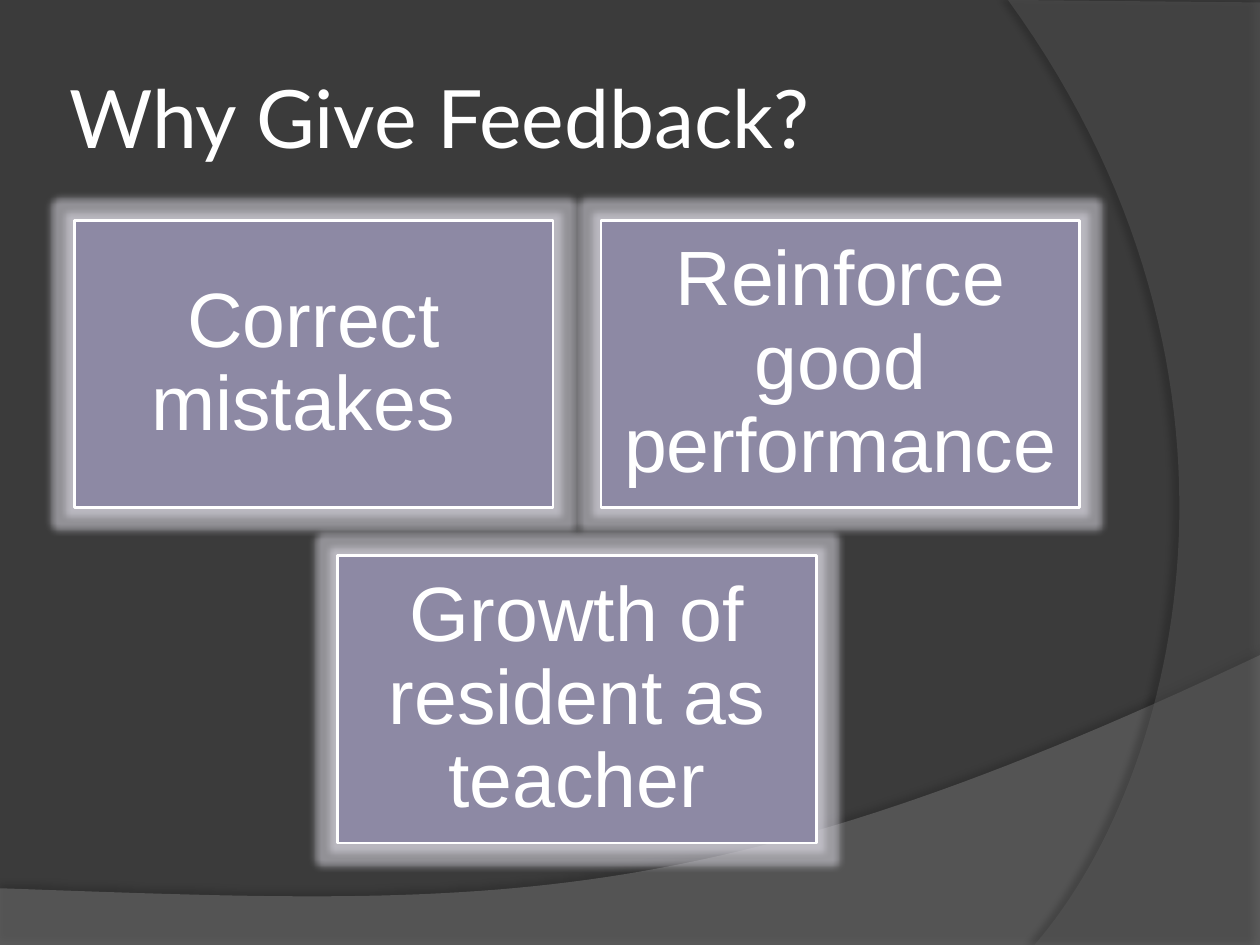
from lxml.etree import SubElement
from pptx import Presentation
from pptx.dml.color import RGBColor as RGB
from pptx.enum.shapes import MSO_SHAPE as Preset
from pptx.enum.text import MSO_ANCHOR as Anchor, PP_ALIGN as Align
from pptx.oxml.ns import qn
from pptx.util import Inches, Pt

WIDTH, HEIGHT = 10, 7.5
BACKGROUND, WHITE = "3B3B3B", "FFFFFF"
TITLE = "Why Give Feedback?"
REASON_ROWS = [
    ["Correct mistakes ", "Reinforce good performance "],
    ["Growth of resident as teacher"],
]
CARD_WIDTH, CARD_HEIGHT, GAP = 3.8, 2.28, 0.38
GRID_CENTER, GRID_TOP = 4.58, 1.75
CARD_FILL = "8D89A4"
GLOW = dict(color="DAD8E2", opacity=55, radius=8)
TITLE_FORMAT = dict(size=Pt(46), name="Lato")
CARD_FORMAT = dict(size=Pt(44), name="Arial")
SWOOSHES = [
    dict(
        corners=[(0, 7.05), (0, HEIGHT), (WIDTH, HEIGHT)],
        curve=[(10, 5.2), (5.59, 7.29), (3.91, 7.19), (0, 7.05)],
        color="7F7F7F", opacity=45,
        shadow=dict(color="000000", opacity=35, blur=4, distance=3.5, angle=270),
    ),
    dict(
        corners=[(10, 0.02), (WIDTH, HEIGHT)],
        curve=[(8.21, 7.5), (9.35, 6.19), (10.18, 3), (8, 0)],
        color="5E5E5E", opacity=40,
        shadow=dict(color="000000", opacity=45, blur=4, distance=4, angle=180),
    ),
]
CURVE_STEPS = 60


def rgb(color):
    return RGB.from_string(color)


def paint(fill, color):
    fill.solid()
    fill.fore_color.rgb = rgb(color)


def add_alpha(color_node, opacity):
    SubElement(color_node, qn("a:alpha"), val=str(opacity * 1000))


def add_effect(shape, kind, color, opacity, **settings):
    shape.shadow.inherit = False
    effects = shape._element.spPr.find(qn("a:effectLst"))
    values = {key: str(int(value)) for key, value in settings.items()}
    effect = SubElement(effects, qn(kind), **values)
    add_alpha(SubElement(effect, qn("a:srgbClr"), val=color), opacity)


def bezier(start, pull_out, pull_in, end):
    for step in range(CURVE_STEPS + 1):
        t = step / CURVE_STEPS
        weights = (1 - t) ** 3, 3 * t * (1 - t) ** 2, 3 * t * t * (1 - t), t ** 3
        yield tuple(
            sum(w * value for w, value in zip(weights, axis))
            for axis in zip(start, pull_out, pull_in, end)
        )


def add_swoosh(slide, corners, curve, color, opacity, shadow):
    outline = [(Inches(x), Inches(y)) for x, y in [*corners, *bezier(*curve)]]
    builder = slide.shapes.build_freeform(*outline[0])
    builder.add_line_segments(outline[1:], close=True)
    swoosh = builder.convert_to_shape()
    paint(swoosh.fill, color)
    add_alpha(swoosh._element.spPr.find(".//" + qn("a:srgbClr")), opacity)
    swoosh.line.fill.background()
    add_effect(
        swoosh, "a:outerShdw", shadow["color"], shadow["opacity"],
        blurRad=Pt(shadow["blur"]), dist=Pt(shadow["distance"]),
        dir=shadow["angle"] * 60000,
    )


def write(shape, wording, inset, font_format, **paragraph_format):
    frame = shape.text_frame
    frame_format = dict(word_wrap=True, vertical_anchor=Anchor.MIDDLE)
    for side in ("left", "right", "top", "bottom"):
        frame_format[f"margin_{side}"] = Inches(inset)
    paragraph = frame.paragraphs[0]
    run = paragraph.add_run()
    run.text = wording
    run.font.color.rgb = rgb(WHITE)
    for part, values in (
        (frame, frame_format), (paragraph, paragraph_format), (run.font, font_format)
    ):
        for key, value in values.items():
            setattr(part, key, value)


def add_card(slide, reason, left, top):
    box = map(Inches, (left, top, CARD_WIDTH, CARD_HEIGHT))
    card = slide.shapes.add_shape(Preset.RECTANGLE, *box)
    paint(card.fill, CARD_FILL)
    paint(card.line.fill, WHITE)
    card.line.width = Pt(1.5)
    add_effect(card, "a:glow", GLOW["color"], GLOW["opacity"], rad=Pt(GLOW["radius"]))
    write(card, reason, 0.18, CARD_FORMAT, alignment=Align.CENTER, line_spacing=0.9)


def main():
    deck = Presentation()
    deck.slide_width, deck.slide_height = Inches(WIDTH), Inches(HEIGHT)
    slide = deck.slides.add_slide(deck.slide_layouts[6])
    paint(slide.background.fill, BACKGROUND)

    for swoosh in SWOOSHES:
        add_swoosh(slide, **swoosh)

    title = slide.shapes.add_textbox(*map(Inches, (0.5, 0.3, 8.17, 1.25)))
    write(title, TITLE, 0.05, TITLE_FORMAT, alignment=Align.LEFT)

    for row, reasons in enumerate(REASON_ROWS):
        row_width = len(reasons) * (CARD_WIDTH + GAP) - GAP
        for column, reason in enumerate(reasons):
            left = GRID_CENTER - row_width / 2 + column * (CARD_WIDTH + GAP)
            add_card(slide, reason, left, GRID_TOP + row * (CARD_HEIGHT + GAP))

    deck.save("out.pptx")


if __name__ == "__main__":
    main()
